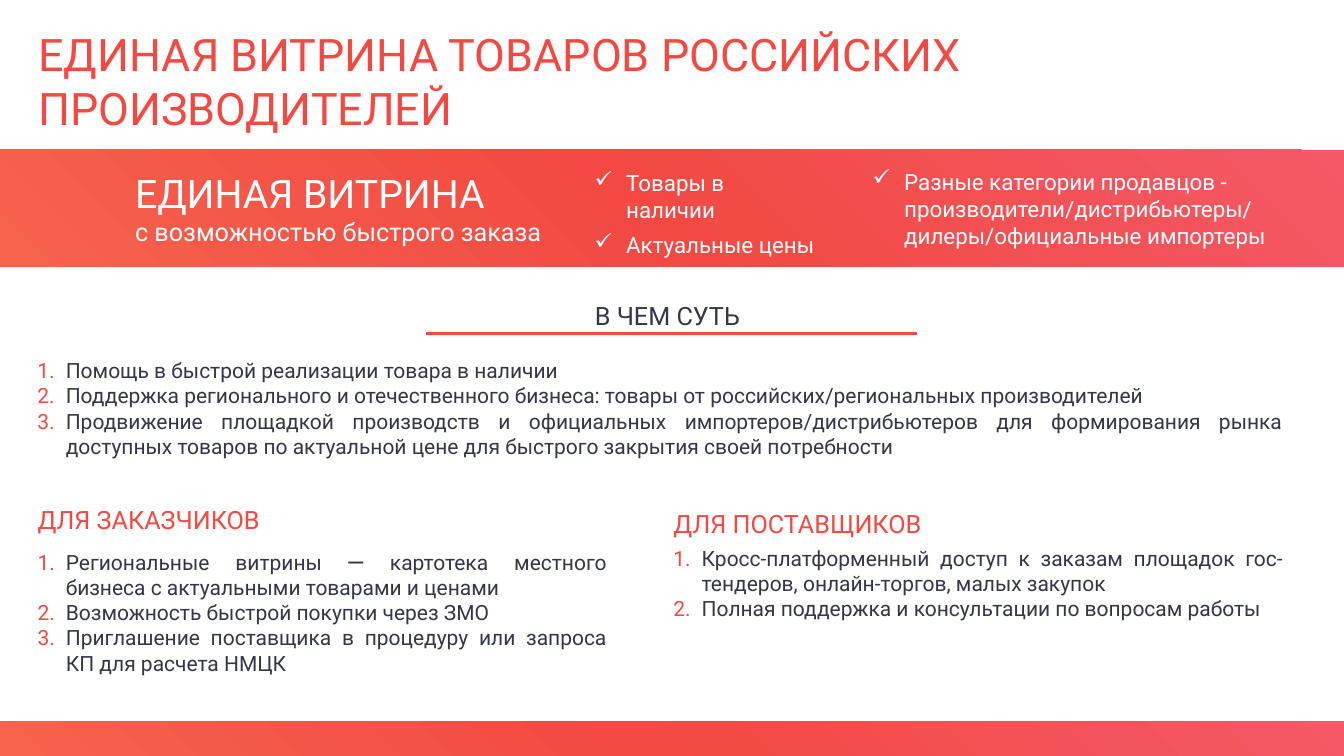
from lxml import etree
from pptx import Presentation
from pptx.dml.color import RGBColor
from pptx.enum.shapes import MSO_CONNECTOR, MSO_SHAPE
from pptx.enum.text import MSO_ANCHOR, MSO_AUTO_SIZE, PP_ALIGN
from pptx.oxml import parse_xml
from pptx.oxml.ns import nsdecls, qn
from pptx.util import Pt

BAND_SHAPE = MSO_SHAPE.ROUND_2_SAME_RECTANGLE
STRAIGHT = MSO_CONNECTOR.STRAIGHT
TOP = MSO_ANCHOR.TOP
GROW = MSO_AUTO_SIZE.SHAPE_TO_FIT_TEXT
FIXED = MSO_AUTO_SIZE.NONE
LEFT, CENTER, JUSTIFY = PP_ALIGN.LEFT, PP_ALIGN.CENTER, PP_ALIGN.JUSTIFY

COLORS = {"red": "F24942", "pink": "F45967", "orange": "F5634D",
          "dark": "343846", "white": "FFFFFF"}
FONT = "Roboto"
PAGE_WIDTH, PAGE_HEIGHT = 960, 540
MARGIN, RIGHT_COLUMN = 26.8, 481
CHECK_INDENT, NUMBER_INDENT = 22.5, 20.25


class SlideBuilder:
    """Holds the style and the current slide."""

    def __init__(self, page):
        self.page = page

    def band(self, top, height):
        """Full-width gradient band: a tall shape turned by 90 degrees."""
        left = (PAGE_WIDTH - height) / 2
        tall_top = top + (height - PAGE_WIDTH) / 2
        band = self.page.shapes.add_shape(
            BAND_SHAPE, Pt(left), Pt(tall_top), Pt(height), Pt(PAGE_WIDTH))
        band.rotation = 90
        band.adjustments[0] = band.adjustments[1] = 0
        band.shadow.inherit = False
        band.line.fill.background()
        stops = "".join(
            f'<a:gs pos="{percent * 1000}"><a:srgbClr val="{COLORS[name]}"/></a:gs>'
            for percent, name in ((0, "pink"), (52, "red"), (100, "orange")))
        gradient = parse_xml(
            f'<a:gradFill {nsdecls("a")} rotWithShape="1"><a:gsLst>{stops}</a:gsLst>'
            '<a:lin ang="2700000" scaled="0"/></a:gradFill>')
        band._element.spPr.find(qn("a:prstGeom")).addnext(gradient)

    def text(self, left, top, width, height, lines, size, color,
             align=LEFT, inset=0, auto_size=GROW):
        """Text box; size is one number or one number per line."""
        box = self.page.shapes.add_textbox(Pt(left), Pt(top), Pt(width), Pt(height))
        frame = box.text_frame
        frame.text = "\n".join(lines)
        frame.word_wrap = True
        frame.auto_size = auto_size
        frame.vertical_anchor = TOP
        frame.margin_left, frame.margin_right = Pt(inset), Pt(7.2)
        frame.margin_top = frame.margin_bottom = Pt(3.6)
        sizes = size if isinstance(size, tuple) else (size,) * len(lines)
        for para, points in zip(frame.paragraphs, sizes):
            para.alignment = align
            for span in para.runs:
                span.font.name = FONT
                span.font.size = Pt(points)
                span.font.color.rgb = RGBColor.from_string(COLORS[color])
        return frame.paragraphs

    def hang(self, para, indent):
        """Hanging indent; returns the paragraph properties."""
        properties = para._p.get_or_add_pPr()
        properties.set("marL", str(Pt(indent)))
        properties.set("indent", str(-Pt(indent)))
        return properties

    def checklist(self, left, top, width, height, lines, inset=0):
        paras = self.text(left, top, width, height, lines, 16, "white", inset=inset)
        for index, para in enumerate(paras):
            properties = self.hang(para, CHECK_INDENT)
            if index:
                para.space_before = Pt(6)
            etree.SubElement(properties, qn("a:buChar")).set("char", "✓")

    def numbered(self, left, top, width, height, lines):
        for para in self.text(left, top, width, height, lines, 15, "dark", JUSTIFY):
            properties = self.hang(para, NUMBER_INDENT)
            tint = etree.SubElement(properties, qn("a:buClr"))
            etree.SubElement(tint, qn("a:srgbClr")).set("val", COLORS["red"])
            etree.SubElement(properties, qn("a:buAutoNum")).set("type", "arabicPeriod")

    def rule(self, left, right, y):
        rule = self.page.shapes.add_connector(STRAIGHT, Pt(left), Pt(y), Pt(right), Pt(y))
        rule.line.color.rgb = RGBColor.from_string(COLORS["red"])
        rule.line.width = Pt(1.5)
        etree.SubElement(rule._element.spPr, qn("a:effectLst"))


def main():
    deck = Presentation()
    deck.slide_width, deck.slide_height = Pt(PAGE_WIDTH), Pt(PAGE_HEIGHT)
    slide = SlideBuilder(deck.slides.add_slide(deck.slide_layouts[6]))

    # Title
    slide.text(27.4, 15.8, 824.4, 51.8,
               ["ЕДИНАЯ ВИТРИНА ТОВАРОВ РОССИЙСКИХ ПРОИЗВОДИТЕЛЕЙ"],
               32, "red", auto_size=FIXED)

    # Gradient bands
    slide.band(515.2, 28.8)
    slide.band(107, 83.5)

    # Showcase summary on the upper band
    slide.text(96.5, 117.4, 340.6, 65.5,
               ["ЕДИНАЯ ВИТРИНА", "с возможностью быстрого заказа"], (28, 18), "white")
    slide.checklist(424.8, 117.4, 165.2, 51.8, ["Товары в наличии", "Актуальные цены"])
    slide.checklist(616.3, 116.6, 343.4, 65.5, [
        "Разные категории продавцов - производители/дистрибьютеры/ "
        "дилеры/официальные импортеры"], inset=7.2)

    # Main idea
    slide.text(398.2, 211, 164.2, 28.8, ["В ЧЕМ СУТЬ"], 18, "dark", CENTER)
    slide.rule(304.6, 655.2, 238.2)
    slide.numbered(MARGIN, 252, 897, 80, [
        "Помощь в быстрой реализации товара в наличии",
        "Поддержка регионального и отечественного бизнеса: товары от "
        "российских/региональных производителей",
        "Продвижение площадкой производств и официальных импортеров/дистрибьютеров "
        "для формирования рынка доступных товаров по актуальной цене для быстрого "
        "закрытия своей потребности"])

    # Customers
    slide.text(MARGIN, 356.4, 219.6, 28.8, ["ДЛЯ ЗАКАЗЧИКОВ"], 18, "red")
    slide.numbered(MARGIN, 388.8, 414, 98, [
        "Региональные витрины ꟷ картотека местного бизнеса с актуальными "
        "товарами и ценами",
        "Возможность быстрой покупки через ЗМО",
        "Приглашение поставщика в процедуру или запроса КП для расчета НМЦК"])

    # Suppliers
    slide.text(RIGHT_COLUMN, 359.3, 219.6, 28.8, ["ДЛЯ ПОСТАВЩИКОВ"], 18, "red")
    slide.numbered(RIGHT_COLUMN, 385.9, 442.8, 62, [
        "Кросс-платформенный доступ к заказам площадок гос-тендеров, "
        "онлайн-торгов, малых закупок",
        "Полная поддержка и консультации по вопросам работы"])

    deck.save("out.pptx")


if __name__ == "__main__":
    main()
